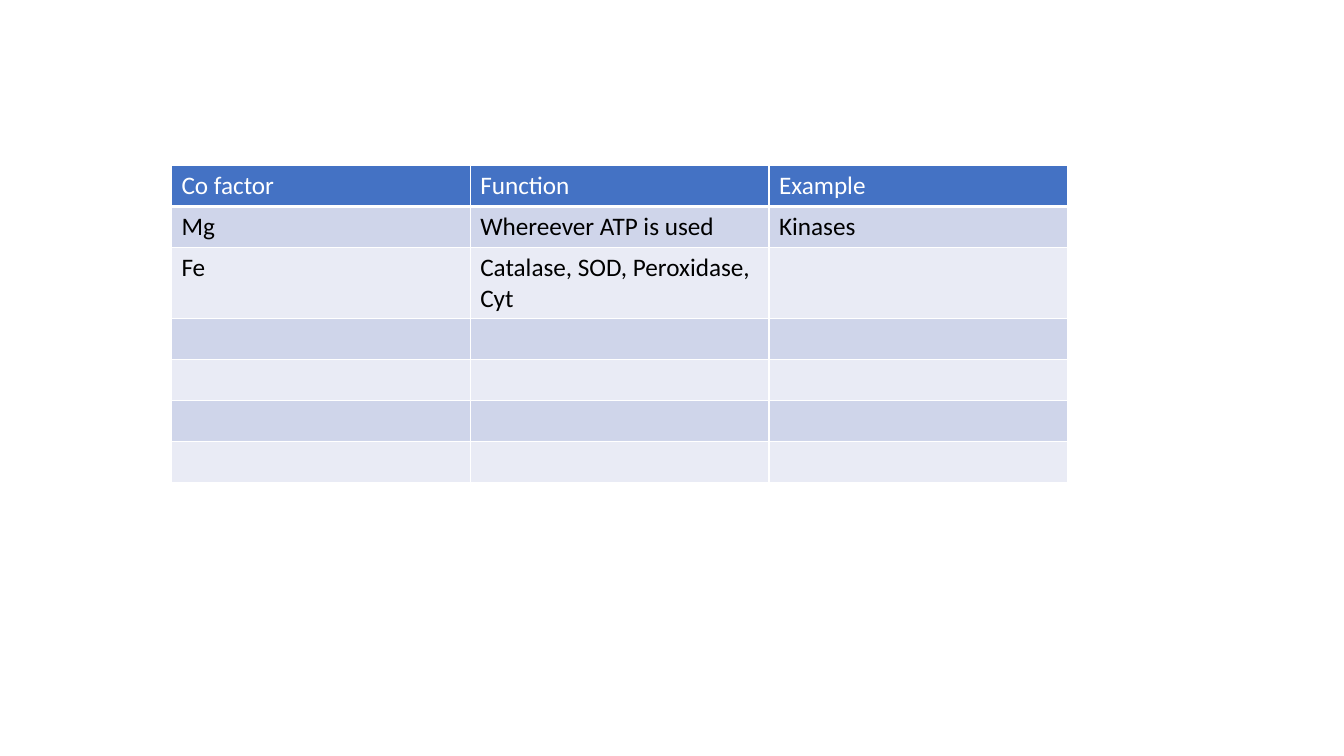
from lxml.etree import SubElement
from pptx import Presentation
from pptx.dml.color import RGBColor
from pptx.oxml.ns import qn
from pptx.util import Cm, Pt

HEADER_FILL = "4472C4"
BAND_FILLS = ("CFD5EA", "E9EBF5")
WHITE, BLACK = "FFFFFF", "000000"

COLUMN_WIDTH = Cm(7.53)
ROW_HEIGHT = Cm(1.03)
TALL_ROW_HEIGHT = Cm(1.78)
TALL_ROW = 2

ROWS = [
    ("Co factor", "Function", "Example"),
    ("Mg", "Whereever ATP is used", "Kinases"),
    ("Fe", "Catalase, SOD, Peroxidase, Cyt", ""),
] + [("", "", "")] * 4


def color(value):
    return RGBColor.from_string(value)


def add_borders(cell, bottom_width):
    """Draw white rules on all four sides of a cell."""
    properties = cell._tc.get_or_add_tcPr()
    for side in "LRTB":
        width = Pt(bottom_width if side == "B" else 1)
        line = SubElement(properties, qn(f"a:ln{side}"), w=str(width))
        fill = SubElement(line, qn("a:solidFill"))
        SubElement(fill, qn("a:srgbClr"), val=WHITE)


def fill_cell(cell, text, is_header, fill):
    add_borders(cell, 3 if is_header else 1)
    cell.fill.solid()
    cell.fill.fore_color.rgb = color(fill)
    para = cell.text_frame.paragraphs[0]
    para.font.size = Pt(18)
    if not text:
        return
    para.text = text
    for span in para.runs:
        span.font.name = "Calibri"
        span.font.size = Pt(18)
        span.font.bold = False
        span.font.color.rgb = color(WHITE if is_header else BLACK)


def add_cofactor_table(page):
    column_count = len(ROWS[0])
    height = ROW_HEIGHT * (len(ROWS) - 1) + TALL_ROW_HEIGHT
    table = page.shapes.add_table(
        len(ROWS), column_count, Cm(4.32), Cm(4.17),
        COLUMN_WIDTH * column_count, height).table
    for column in table.columns:
        column.width = COLUMN_WIDTH
    for row_index, texts in enumerate(ROWS):
        is_header = row_index == 0
        fill = HEADER_FILL if is_header else BAND_FILLS[(row_index - 1) % 2]
        table.rows[row_index].height = (
            TALL_ROW_HEIGHT if row_index == TALL_ROW else ROW_HEIGHT)
        for column_index, text in enumerate(texts):
            fill_cell(table.cell(row_index, column_index), text, is_header, fill)


def main():
    # Widescreen deck with one blank page
    deck = Presentation()
    deck.slide_width, deck.slide_height = Cm(33.87), Cm(19.05)
    page = deck.slides.add_slide(deck.slide_layouts[6])

    # Table of enzyme cofactors
    add_cofactor_table(page)
    deck.save("out.pptx")


if __name__ == "__main__":
    main()
